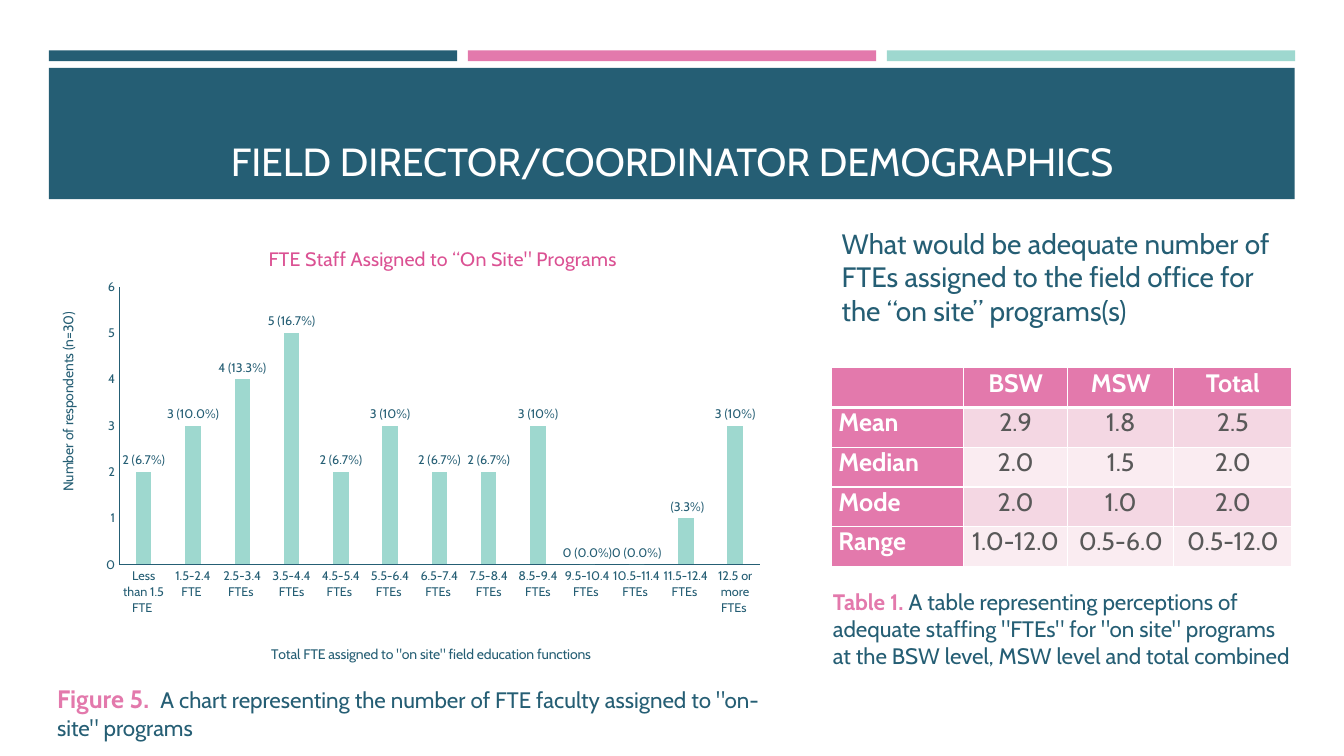
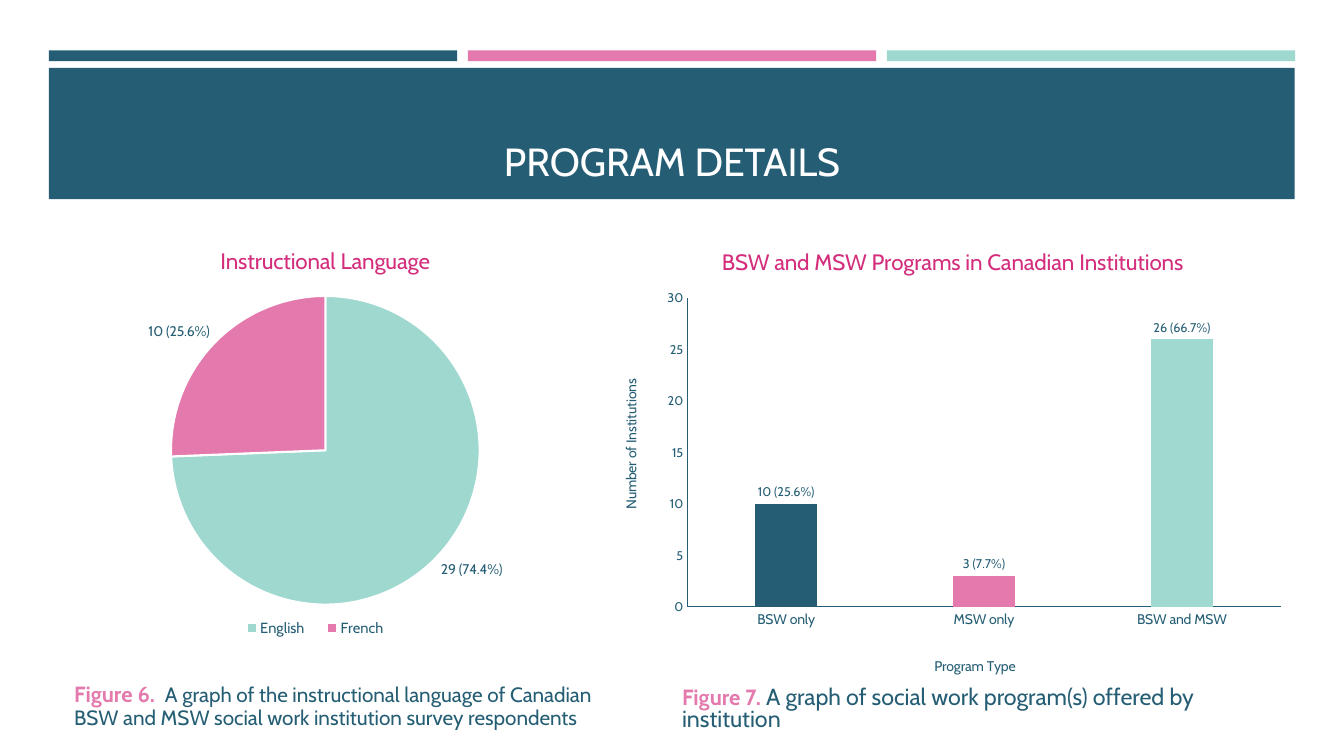
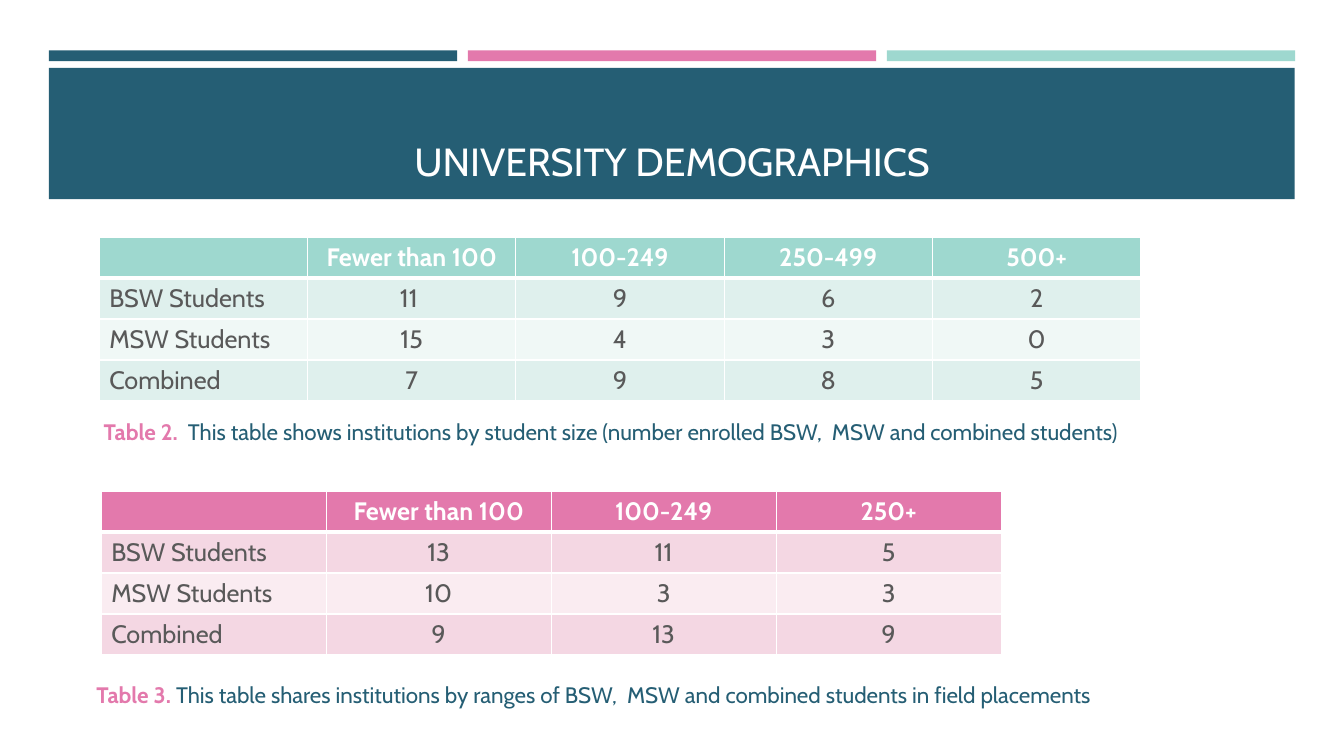
from dataclasses import dataclass
from typing import NamedTuple, Optional

from lxml import etree
from pptx import Presentation
from pptx.chart.data import CategoryChartData
from pptx.dml.color import RGBColor
from pptx.enum.chart import XL_CHART_TYPE, XL_LABEL_POSITION, XL_LEGEND_POSITION, XL_TICK_MARK
from pptx.enum.shapes import MSO_SHAPE
from pptx.enum.text import MSO_ANCHOR, PP_ALIGN
from pptx.oxml.ns import qn
from pptx.util import Cm, Pt

FONT = "Cabin"
TEAL = RGBColor(0x25, 0x5E, 0x74)
PINK = RGBColor(0xE3, 0x79, 0xAC)
MINT = RGBColor(0x9E, 0xD8, 0xCF)
WHITE = RGBColor(0xFF, 0xFF, 0xFF)
GREY = RGBColor(0x59, 0x59, 0x59)
ROSE = RGBColor(0xDB, 0x51, 0x93)
MAGENTA = RGBColor(0xD3, 0x2D, 0x7C)
BAR_TEAL = RGBColor(0x24, 0x5D, 0x74)
BAR_PINK = RGBColor(0xE4, 0x79, 0xAD)
BAR_MINT = RGBColor(0x9F, 0xD9, 0xCF)
PINK_TINTS = (RGBColor(0xF4, 0xD7, 0xE3), RGBColor(0xFA, 0xEC, 0xF1))
MINT_TINTS = (RGBColor(0xDF, 0xF0, 0xED), RGBColor(0xF0, 0xF8, 0xF6))

RECTANGLE = MSO_SHAPE.RECTANGLE
COLUMN = XL_CHART_TYPE.COLUMN_CLUSTERED
PIE = XL_CHART_TYPE.PIE
OUTSIDE_END = XL_LABEL_POSITION.OUTSIDE_END
LEGEND_BOTTOM = XL_LEGEND_POSITION.BOTTOM
NO_TICKS = XL_TICK_MARK.NONE
TOP, MIDDLE, BOTTOM = MSO_ANCHOR.TOP, MSO_ANCHOR.MIDDLE, MSO_ANCHOR.BOTTOM
LEFT, CENTER = PP_ALIGN.LEFT, PP_ALIGN.CENTER


class Box(NamedTuple):
    left: float
    top: float
    width: float = 0
    height: float = 0

    def lengths(self) -> list:
        return [Cm(value) for value in self]


class Run(NamedTuple):
    text: str
    size: float
    color: RGBColor = TEAL
    bold: bool = False


class Heading(NamedTuple):
    text: str
    at: Box
    size: float = 10
    color: RGBColor = TEAL


class Bar(NamedTuple):
    category: str
    value: int
    label: str


@dataclass
class AxisPlan:
    category_title: Heading
    value_title: Heading
    maximum: int
    unit: int
    category_size: float


@dataclass
class ChartPlan:
    box: Box
    plot: Box
    title: Heading
    bars: list[Bar]
    colors: list[RGBColor]
    label_size: float
    axes: Optional[AxisPlan] = None
    legend: Optional[Box] = None


@dataclass
class TablePlan:
    left: float
    top: float
    columns: list[float]
    row_height: float
    rows: list[list[str]]
    color: RGBColor
    tints: tuple[RGBColor, RGBColor]
    label_column: bool = False
    tight: bool = False


BAND = Box(1.23, 1.71, 31.4, 3.31)
TITLE = Box(1.62, 1.96, 30.63, 2.82)
STRIPE = Box(1.23, 1.27, 10.29, 0.27)
STRIPE_PITCH = 10.56


def style_font(font, size: float, color: RGBColor, bold: bool = False) -> None:
    font.name, font.size, font.bold = FONT, Pt(size), bold
    font.color.rgb = color


def fill_paragraph(paragraph, runs: list[Run]) -> None:
    for item in runs:
        run = paragraph.add_run()
        run.text = item.text
        style_font(run.font, item.size, item.color, item.bold)


def add_text(slide, box: Box, runs: list[Run], *, anchor=TOP, align=LEFT,
             spacing: float = 1, after: float = 0) -> None:
    frame = slide.shapes.add_textbox(*box.lengths()).text_frame
    frame.word_wrap = True
    frame.vertical_anchor = anchor
    paragraph = frame.paragraphs[0]
    paragraph.alignment = align
    paragraph.line_spacing = spacing
    paragraph.space_after = Pt(after)
    fill_paragraph(paragraph, runs)


def add_band(slide, box: Box, color: RGBColor) -> None:
    band = slide.shapes.add_shape(RECTANGLE, *box.lengths())
    band.shadow.inherit = False
    band.fill.solid()
    band.fill.fore_color.rgb = color
    band.line.fill.background()


def add_titled_slide(deck, title: str):
    slide = deck.slides.add_slide(deck.slide_layouts[6])
    for index, color in enumerate((TEAL, PINK, MINT)):
        add_band(slide, STRIPE._replace(left=STRIPE.left + index * STRIPE_PITCH), color)
    add_band(slide, BAND, TEAL)
    add_text(slide, TITLE, [Run(title, 28, WHITE)], anchor=BOTTOM, align=CENTER)
    return slide


def place_part(part, at: Box, chart_box: Box, inner: bool = False) -> None:
    for old in part.findall(qn("c:layout")):
        part.remove(old)
    layout = etree.Element(qn("c:layout"))
    manual = etree.SubElement(layout, qn("c:manualLayout"))
    settings = {"layoutTarget": "inner"} if inner else {}
    settings |= {"xMode": "edge", "yMode": "edge",
                 "x": (at.left - chart_box.left) / chart_box.width,
                 "y": (at.top - chart_box.top) / chart_box.height}
    if at.width:
        settings |= {"w": at.width / chart_box.width, "h": at.height / chart_box.height}
    for name, value in settings.items():
        etree.SubElement(manual, qn(f"c:{name}")).set("val", str(value))
    part.insert(0 if inner else 1, layout)


def write_heading(title, heading: Heading, chart_box: Box, rotation: int = 0) -> None:
    frame = title.text_frame
    fill_paragraph(frame.paragraphs[0], [Run(heading.text, heading.size, heading.color)])
    body = title.element.find(".//" + qn("a:bodyPr"))
    body.set("rot", str(rotation * 60000))
    body.set("vert", "horz")
    place_part(title.element, heading.at, chart_box)


def style_axis(axis, size: float) -> None:
    axis.has_major_gridlines = False
    axis.major_tick_mark = axis.minor_tick_mark = NO_TICKS
    axis.format.line.color.rgb = TEAL
    axis.format.line.width = Pt(0.75)
    style_font(axis.tick_labels.font, size, TEAL)


def style_columns(chart, plan: AxisPlan, box: Box) -> None:
    chart.plots[0].gap_width = 219
    chart.plots[0].overlap = -27
    style_axis(chart.category_axis, plan.category_size)
    style_axis(chart.value_axis, 9)
    chart.value_axis.minimum_scale = 0
    chart.value_axis.maximum_scale = plan.maximum
    chart.value_axis.major_unit = plan.unit
    write_heading(chart.category_axis.axis_title, plan.category_title, box)
    write_heading(chart.value_axis.axis_title, plan.value_title, box, rotation=-90)


def add_chart(slide, plan: ChartPlan) -> None:
    data = CategoryChartData()
    data.categories = [bar.category for bar in plan.bars]
    data.add_series("Series 1", [bar.value for bar in plan.bars])
    kind = COLUMN if plan.axes else PIE
    chart = slide.shapes.add_chart(kind, *plan.box.lengths(), data).chart
    style_font(chart.font, 10, GREY)
    chart.has_title = True
    write_heading(chart.chart_title, plan.title, plan.box)
    chart.has_legend = plan.legend is not None
    plot = chart.plots[0]
    plot.vary_by_categories = plan.axes is None
    if plan.axes:
        style_columns(chart, plan.axes, plan.box)
    if plan.legend:
        chart.legend.position = LEGEND_BOTTOM
        chart.legend.include_in_layout = False
        style_font(chart.legend.font, 10.5, TEAL)
        place_part(chart.element.find(".//" + qn("c:legend")), plan.legend, plan.box)
    series = plot.series[0]
    series.format.fill.solid()
    series.format.fill.fore_color.rgb = plan.colors[0]
    labels = series.data_labels
    labels.show_value = True
    labels.show_category_name = plan.axes is None
    labels.position = OUTSIDE_END
    style_font(labels.font, plan.label_size, TEAL)
    for index, bar in enumerate(plan.bars):
        point = series.points[index]
        if len(plan.colors) > 1:
            point.format.fill.solid()
            point.format.fill.fore_color.rgb = plan.colors[index]
        if not plan.axes:
            point.format.line.color.rgb = WHITE
            point.format.line.width = Pt(1.5)
        frame = point.data_label.text_frame
        frame.word_wrap = False
        fill_paragraph(frame.paragraphs[0], [Run(bar.label, plan.label_size)])
        point.data_label.position = OUTSIDE_END
    plot_area = chart.element.find(".//" + qn("c:plotArea"))
    place_part(plot_area, plan.plot, plan.box, inner=True)


def add_borders(cell, top: float, bottom: float) -> None:
    properties = cell._tc.get_or_add_tcPr()
    for side, width in (("L", 1), ("R", 1), ("T", top), ("B", bottom)):
        line = etree.SubElement(properties, qn(f"a:ln{side}"), w=str(Pt(width)))
        fill = etree.SubElement(line, qn("a:solidFill"))
        etree.SubElement(fill, qn("a:srgbClr"), val=str(WHITE))


def add_table(slide, plan: TablePlan) -> None:
    box = Box(plan.left, plan.top, sum(plan.columns), plan.row_height * len(plan.rows))
    table = slide.shapes.add_table(len(plan.rows), len(plan.columns), *box.lengths()).table
    for column, width in zip(table.columns, plan.columns):
        column.width = Cm(width)
    for r, texts in enumerate(plan.rows):
        table.rows[r].height = Cm(plan.row_height)
        for c, text in enumerate(texts):
            cell = table.cell(r, c)
            strong = r == 0 or (plan.label_column and c == 0)
            add_borders(cell, top=3 if r == 1 else 1, bottom=3 if r == 0 else 1)
            cell.fill.solid()
            cell.fill.fore_color.rgb = plan.color if strong else plan.tints[(r - 1) % 2]
            if plan.tight:
                cell.margin_left = cell.margin_right = Cm(0.18)
                cell.margin_top = cell.margin_bottom = Cm(0)
            paragraph = cell.text_frame.paragraphs[0]
            paragraph.alignment = CENTER if c else LEFT
            if text:
                fill_paragraph(paragraph, [Run(text, 18, WHITE if strong else GREY, strong)])


def add_caption(slide, box: Box, label: str, text: str, *, label_size: float = 16,
                size: float = 16, **layout) -> None:
    add_text(slide, box, [Run(label, label_size, PINK, True), Run(text, size)], **layout)


STAFF_CHART = ChartPlan(
    box=Box(1.19, 5.56, 18.34, 11.25),
    plot=Box(3, 7.24, 16.15, 7.06),
    title=Heading('FTE Staff Assigned to “On Site" Programs', Box(6.68, 6.09), 14, ROSE),
    bars=[
        Bar("Less than 1.5 FTE ", 2, "2 (6.7%)"),
        Bar("1.5-2.4 FTE ", 3, "3 (10.0%)"),
        Bar("2.5-3.4 FTEs ", 4, "4 (13.3%)"),
        Bar("3.5-4.4 FTEs", 5, "5 (16.7%)"),
        Bar("4.5-5.4 FTEs ", 2, "2 (6.7%)"),
        Bar("5.5-6.4 FTEs ", 3, "3 (10%)"),
        Bar("6.5-7.4 FTEs ", 2, "2 (6.7%)"),
        Bar("7.5-8.4 FTEs", 2, "2 (6.7%)"),
        Bar("8.5-9.4 FTEs", 3, "3 (10%)"),
        Bar("9.5-10.4 FTEs ", 0, "0 (0.0%)"),
        Bar("10.5-11.4 FTEs ", 0, "0 (0.0%)"),
        Bar("11.5-12.4 FTEs ", 1, " (3.3%)"),
        Bar("12.5 or more FTEs ", 3, "3 (10%)"),
    ],
    colors=[MINT],
    label_size=9,
    axes=AxisPlan(
        Heading('Total FTE assigned to "on site" field education functions', Box(6.77, 16.27)),
        Heading("Number of respondents (n=30)", Box(1.4, 7.85)),
        maximum=6, unit=1, category_size=9),
)

LANGUAGE_CHART = ChartPlan(
    box=Box(0.99, 5.77, 14.4, 10.69),
    plot=Box(4.31, 7.46, 7.78, 7.78),
    title=Heading("Instructional Language", Box(5.45, 6.1), 16, MAGENTA),
    bars=[Bar("English", 29, "29 (74.4%)"), Bar("French", 10, "10 (25.6%)")],
    colors=[MINT, PINK],
    label_size=10,
    legend=Box(5.77, 15.5, 4.36, 0.66),
)

PROGRAM_CHART = ChartPlan(
    box=Box(15.39, 5.77, 17.22, 11.33),
    plot=Box(17.32, 7.52, 14.96, 7.81),
    title=Heading("BSW and MSW Programs in Canadian Institutions",
                  Box(18.09, 6.13), 16, MAGENTA),
    bars=[Bar("BSW only", 10, "10 (25.6%)"), Bar("MSW only", 3, "3 (7.7%)"),
          Bar("BSW and MSW", 26, "26 (66.7%)")],
    colors=[BAR_TEAL, BAR_PINK, BAR_MINT],
    label_size=9,
    axes=AxisPlan(
        Heading("Program Type", Box(23.48, 16.51)),
        Heading("Number of Institutions", Box(15.59, 9.52)),
        maximum=30, unit=5, category_size=10),
)

ADEQUATE_TABLE = TablePlan(
    20.95, 9.27, [3.33, 2.63, 2.67, 2.98], 1,
    [["", "BSW", "MSW", "Total"],
     ["Mean", "2.9", "1.8", "2.5"],
     ["Median", "2.0", "1.5", "2.0"],
     ["Mode", "2.0", "1.0", "2.0"],
     ["Range", "1.0-12.0", "0.5-6.0", "0.5-12.0"]],
    PINK, PINK_TINTS, label_column=True, tight=True)

ENROLLED_TABLE = TablePlan(
    2.5, 5.98, [5.25] * 5, 1.03,
    [["", "Fewer than 100", "100-249", "250-499", "500+"],
     ["BSW Students", "11 ", "9", "6", "2"],
     ["MSW Students", "15", "4", "3", "0"],
     ["Combined ", "7", "9", "8", "5"]],
    MINT, MINT_TINTS)

PLACEMENT_TABLE = TablePlan(
    2.55, 12.38, [5.67] * 4, 1.03,
    [["", "Fewer than 100", "100-249", "250+"],
     ["BSW Students", "13", "11", "5"],
     ["MSW Students", "10", "3", "3"],
     ["Combined", "9", "13", "9"]],
    PINK, PINK_TINTS)


def build_director_slide(deck) -> None:
    slide = add_titled_slide(deck, "FIELD DIRECTOR/COORDINATOR DEMOGRAPHICS")
    add_caption(slide, Box(1.19, 17.1, 18.34, 1.7), "Figure 5.  ",
                'A chart representing the number of FTE faculty assigned to "on-site" programs',
                label_size=18)
    add_table(slide, ADEQUATE_TABLE)
    add_caption(slide, Box(20.74, 14.7, 12.04, 2.31), "Table 1. ",
                'A table representing perceptions of adequate staffing "FTEs" for "on site" '
                "programs at the BSW level, MSW level and total combined")
    add_text(slide, Box(20.96, 5.58, 11.86, 2.82),
             [Run("What would be adequate number of FTEs assigned to the field office "
                  "for the “on site” programs(s) ", 20)])
    add_chart(slide, STAFF_CHART)


def build_program_slide(deck) -> None:
    slide = add_titled_slide(deck, "PROGRAM DETAILS")
    add_chart(slide, LANGUAGE_CHART)
    add_caption(slide, Box(1.62, 17.07, 13.77, 1.47), "Figure 6.  ",
                "A graph of the instructional language of Canadian BSW and MSW "
                "social work institution survey respondents",
                label_size=15.7, size=14.8, anchor=MIDDLE, spacing=0.9, after=6)
    add_caption(slide, Box(16.94, 17.15, 15.32, 1.47), "Figure 7. ",
                "A graph of social work program(s) offered by institution",
                label_size=15.7, size=16.6, anchor=MIDDLE, spacing=0.8, after=6)
    add_chart(slide, PROGRAM_CHART)


def build_university_slide(deck) -> None:
    slide = add_titled_slide(deck, "UNIVERSITY DEMOGRAPHICS")
    add_table(slide, ENROLLED_TABLE)
    add_caption(slide, Box(2.36, 10.41, 26.42, 0.94), "Table 2.  ",
                "This table shows institutions by student size "
                "(number enrolled BSW,  MSW and combined students)")
    add_table(slide, PLACEMENT_TABLE)
    add_caption(slide, Box(2.18, 17.04, 25.81, 0.94), "Table 3. ",
                "This table shares institutions by ranges of BSW,  MSW "
                "and combined students in field placements ")


def main() -> None:
    deck = Presentation()
    deck.slide_width, deck.slide_height = Cm(33.87), Cm(19.05)
    build_director_slide(deck)
    build_program_slide(deck)
    build_university_slide(deck)
    deck.save("out.pptx")


if __name__ == "__main__":
    main()
